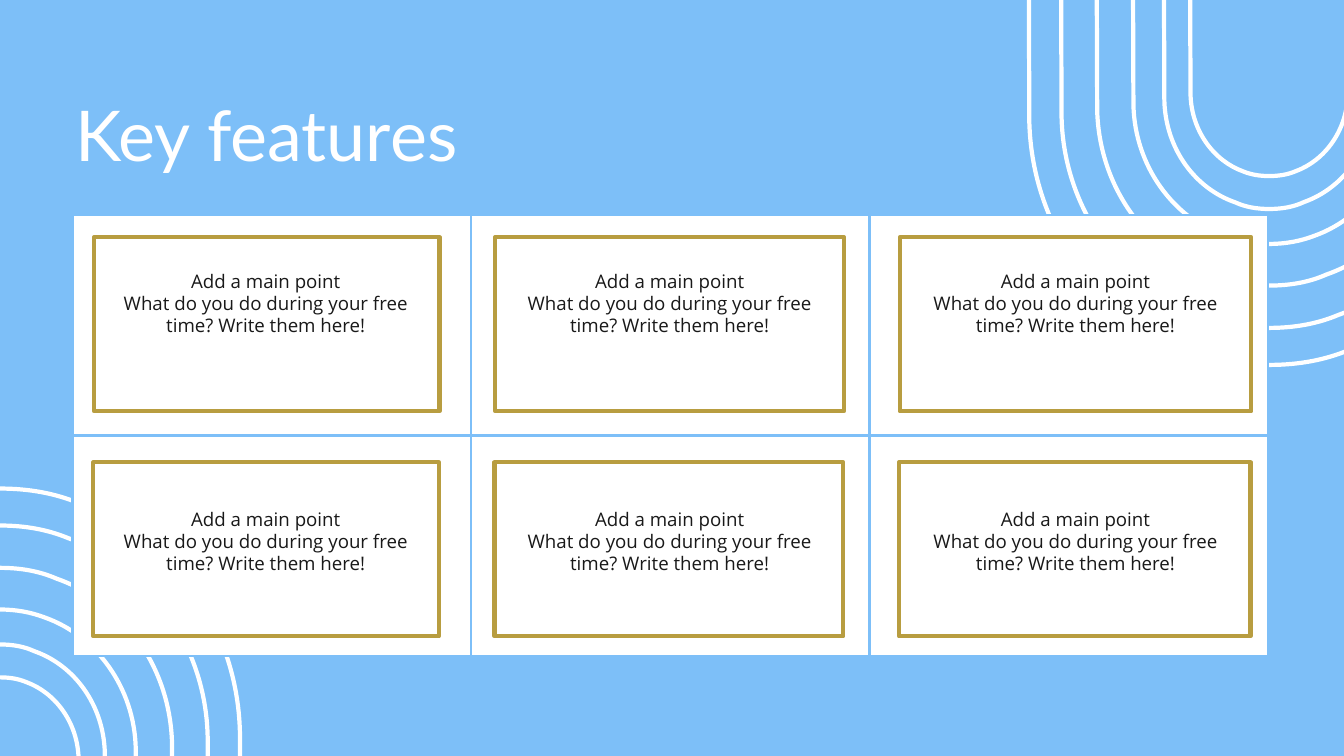
from lxml.etree import SubElement
from pptx import Presentation
from pptx.dml.color import RGBColor
from pptx.enum.shapes import MSO_SHAPE as Shape
from pptx.enum.text import MSO_AUTO_SIZE as AutoSize, PP_ALIGN as Align
from pptx.oxml.ns import qn
from pptx.util import Pt

PX = 9144
COLORS = {"sky": "7DBFF8", "white": "FFFFFF", "gold": "B89D40", "ink": "191919"}


def rgb(name):
    return RGBColor.from_string(COLORS[name])


def write(frame, text, font="Open Sans", size=20, color="ink",
          align=Align.LEFT, spacing=None, inset=0):
    frame.word_wrap = True
    frame.auto_size = AutoSize.SHAPE_TO_FIT_TEXT
    frame.margin_left = frame.margin_right = inset * PX
    frame.margin_top = frame.margin_bottom = inset * PX
    frame.text = text
    for paragraph in frame.paragraphs:
        paragraph.alignment = align
        paragraph.line_spacing = spacing
        paragraph.font.name = font
        paragraph.font.size = Pt(size)
        paragraph.font.color.rgb = rgb(color)


def bend(freeform, starts):
    segments = list(freeform._element.iter(qn("a:lnTo")))
    for start in starts:
        curve, *controls = segments[start:start + 3]
        curve.tag = qn("a:cubicBezTo")
        for control in controls:
            curve.append(control[0])
            control.getparent().remove(control)


class Deck:
    line_width = 4.5
    border_width = 3

    def __init__(self, width, height):
        self.deck = Presentation()
        self.deck.slide_width = width * PX
        self.deck.slide_height = height * PX

    def add_slide(self, color):
        self.slide = self.deck.slides.add_slide(self.deck.slide_layouts[6])
        self.slide.background.fill.solid()
        self.slide.background.fill.fore_color.rgb = rgb(color)

    def outline(self, shape, color):
        shape.shadow.inherit = False
        shape.fill.background()
        shape.line.color.rgb = rgb(color)
        shape.line.width = Pt(self.line_width)

    def arch(self, center, top, radius, height, rotation):
        depth = radius + 5
        tip = top + height

        def place(x, rise):
            return center + x * radius, tip - rise * depth

        right = [(0.33, 0.06), (0.71, 0.19), (0.99, 0.56), (1, 1)]
        crown = [(-0.23, 0.02), (-0.12, 0), (0, 0), (0.12, 0), (0.23, 0.02)]
        left = [(-x, rise) for x, rise in reversed(right)]
        ends = [(center + radius, top), (center - radius, top)]
        points = ([place(*point) for point in crown + right] + ends
                  + [place(*point) for point in left])
        builder = self.slide.shapes.build_freeform(*points[-1], scale=PX)
        builder.add_line_segments(points, close=True)
        arch = builder.convert_to_shape()
        bend(arch, (0, 3, 6, 12))
        arch.rotation = rotation
        self.outline(arch, "white")

    def frame(self, left, top, width, height):
        frame = self.slide.shapes.add_shape(
            Shape.RECTANGLE, left * PX, top * PX, width * PX, height * PX)
        self.outline(frame, "gold")
        SubElement(frame.line._get_or_add_ln(), qn("a:round"))

    def text(self, left, top, width, height, text, **style):
        box = self.slide.shapes.add_textbox(
            left * PX, top * PX, width * PX, height * PX)
        write(box.text_frame, text, **style)

    def grid(self, left, top, columns, rows, cell_width, cell_height):
        grid = self.slide.shapes.add_table(
            rows, columns, left * PX, top * PX,
            columns * cell_width * PX, rows * cell_height * PX).table
        for column in grid.columns:
            column.width = cell_width * PX
        for row in grid.rows:
            row.height = cell_height * PX
        for cell in grid.iter_cells():
            self.border(cell, "sky")
            cell.fill.solid()
            cell.fill.fore_color.rgb = rgb("white")

    def border(self, cell, color):
        properties = cell._tc.get_or_add_tcPr()
        for side in ("lnL", "lnR", "lnT", "lnB"):
            line = SubElement(properties, qn(f"a:{side}"),
                              w=str(Pt(self.border_width)))
            fill = SubElement(line, qn("a:solidFill"))
            SubElement(fill, qn("a:srgbClr"), val=COLORS[color])

    def save(self):
        self.deck.save("out.pptx")


def main():
    deck = Deck(2000, 1125)
    deck.add_slide("sky")
    deck.text(112, 111, 624, 126, "Key features",
              font="Lato", size=75, color="white", spacing=1.2)

    arches = [(357, 1161, 727), (309, 1053, 782), (256, 926, 845),
              (202, 801, 907), (156, 698, 959), (117, 600, 1008)]
    for radius, height, tip in arches:
        deck.arch(0, tip, radius, height, 180)
    for radius, height, tip in arches:
        deck.arch(1888, 1270 - tip - height, radius, height, 359.8)

    deck.grid(108, 320, 3, 2, 593, 328)

    columns = [(140, 514, 168), (737, 519, 769), (1339, 523, 1373)]
    rows = [(353, 391, 0), (688, 745, 1)]
    for frame_top, _, shift in rows:
        for frame_left, frame_width, _ in columns:
            deck.frame(frame_left - shift, frame_top, frame_width, 259)
    feature = ("Add a main point\n"
               "What do you do during your free time? Write them here!")
    for _, text_top, _ in rows:
        for _, _, text_left in columns:
            deck.text(text_left, text_top, 455, 145, feature,
                      align=Align.CENTER, inset=10)
    deck.save()


if __name__ == "__main__":
    main()
